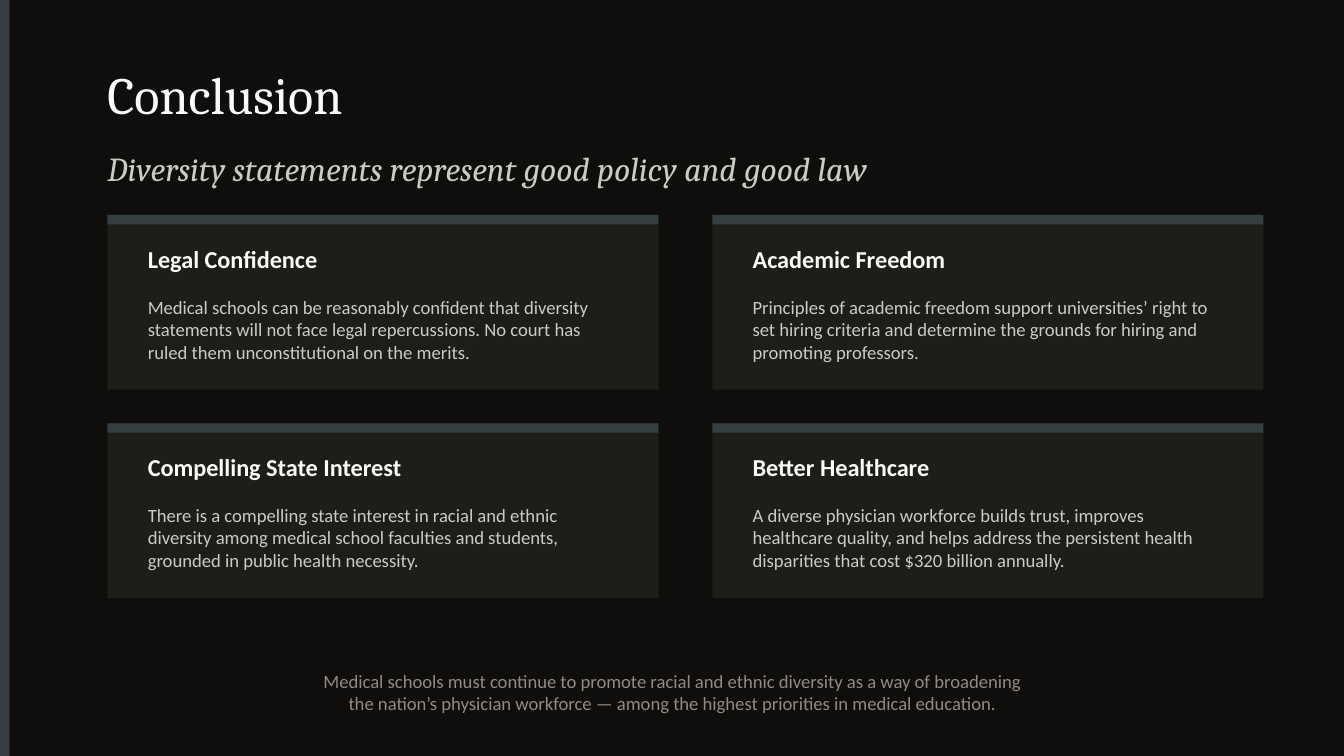
from dataclasses import dataclass

import pptx
import pptx.dml.color
import pptx.enum.shapes
import pptx.enum.text
import pptx.slide
import pptx.util

Pt = pptx.util.Pt
ALIGN = pptx.enum.text.PP_ALIGN


@dataclass(frozen=True)
class Theme:
    background: str = "0F0E0D"
    accent: str = "333F40"
    card: str = "1F1D1A"
    bright: str = "FAFAF9"
    soft: str = "CCCAC6"
    muted: str = "8F8B85"
    serif: str = "Cambria"
    sans: str = "Calibri"
    title_size: float = 28
    subtitle_size: float = 18
    heading_size: float = 13
    body_size: float = 10


@dataclass(frozen=True)
class Box:
    left: float
    top: float
    width: float
    height: float

    def lengths(self) -> tuple[int, int, int, int]:
        return Pt(self.left), Pt(self.top), Pt(self.width), Pt(self.height)


@dataclass(frozen=True)
class Card:
    heading: str
    body: str


THEME = Theme()
SLIDE_W, SLIDE_H = 720, 405
MARGIN = 57.6
CONTENT_W = 604.8
BAR = 5.04
CARD_W, CARD_H = 295.2, 93.6
CARD_TOP = 115.2
COLUMN_GAP, ROW_GAP = 28.8, 18
CARD_PAD = 21.6

CARDS = [
    Card("Legal Confidence",
         "Medical schools can be reasonably confident that diversity statements will not "
         "face legal repercussions. No court has ruled them unconstitutional on the merits."),
    Card("Academic Freedom",
         "Principles of academic freedom support universities’ right to set hiring criteria "
         "and determine the grounds for hiring and promoting professors."),
    Card("Compelling State Interest",
         "There is a compelling state interest in racial and ethnic diversity among medical "
         "school faculties and students, grounded in public health necessity."),
    Card("Better Healthcare",
         "A diverse physician workforce builds trust, improves healthcare quality, and helps "
         "address the persistent health disparities that cost $320 billion annually."),
]


def rgb(color: str) -> pptx.dml.color.RGBColor:
    return pptx.dml.color.RGBColor.from_string(color)


def add_rect(s: pptx.slide.Slide, box: Box, color: str) -> None:
    sp = s.shapes.add_shape(pptx.enum.shapes.MSO_SHAPE.RECTANGLE, *box.lengths())
    sp.shadow.inherit = False
    sp.fill.solid()
    sp.fill.fore_color.rgb = rgb(color)
    sp.line.fill.background()


def add_text(s: pptx.slide.Slide, box: Box, *lines: str, size: float = THEME.body_size,
             color: str = THEME.soft, font: str = THEME.sans, bold: bool = False,
             italic: bool = False, align: ALIGN = ALIGN.LEFT) -> None:
    tf = s.shapes.add_textbox(*box.lengths()).text_frame
    tf.word_wrap = True
    tf.vertical_anchor = pptx.enum.text.MSO_ANCHOR.MIDDLE
    tf.margin_left = tf.margin_top = tf.margin_right = tf.margin_bottom = 0
    for i, line in enumerate(lines):
        p = tf.add_paragraph() if i else tf.paragraphs[0]
        p.alignment = align
        r = p.add_run()
        r.text = line
        r.font.name = font
        r.font.size = Pt(size)
        r.font.bold = bold
        r.font.italic = italic
        r.font.color.rgb = rgb(color)


def add_card(s: pptx.slide.Slide, card: Card, left: float, top: float) -> None:
    text_left, text_w = left + CARD_PAD, CARD_W - 2 * CARD_PAD
    add_rect(s, Box(left, top, CARD_W, CARD_H), THEME.card)
    add_rect(s, Box(left, top, CARD_W, BAR), THEME.accent)
    add_text(s, Box(text_left, top + 10.8, text_w, 25.2), card.heading,
             size=THEME.heading_size, color=THEME.bright, bold=True)
    add_text(s, Box(text_left, top + 36, text_w, 50.4), card.body)


def main() -> None:
    prs = pptx.Presentation()
    prs.slide_width, prs.slide_height = Pt(SLIDE_W), Pt(SLIDE_H)
    s = prs.slides.add_slide(prs.slide_layouts[6])
    s.background.fill.solid()
    s.background.fill.fore_color.rgb = rgb(THEME.background)

    add_rect(s, Box(0, 0, BAR, SLIDE_H), THEME.accent)
    add_text(s, Box(MARGIN, 28.8, CONTENT_W, 43.2), "Conclusion",
             size=THEME.title_size, color=THEME.bright, font=THEME.serif)
    add_text(s, Box(MARGIN, 72, CONTENT_W, 36),
             "Diversity statements represent good policy and good law",
             size=THEME.subtitle_size, font=THEME.serif, italic=True)

    for i, card in enumerate(CARDS):
        row, column = divmod(i, 2)
        add_card(s, card, MARGIN + column * (CARD_W + COLUMN_GAP),
                 CARD_TOP + row * (CARD_H + ROW_GAP))

    add_text(s, Box(MARGIN, 352.8, CONTENT_W, 36),
             "Medical schools must continue to promote racial and ethnic diversity "
             "as a way of broadening",
             "the nation’s physician workforce — among the highest priorities "
             "in medical education.",
             color=THEME.muted, align=ALIGN.CENTER)
    prs.save("out.pptx")


if __name__ == "__main__":
    main()
